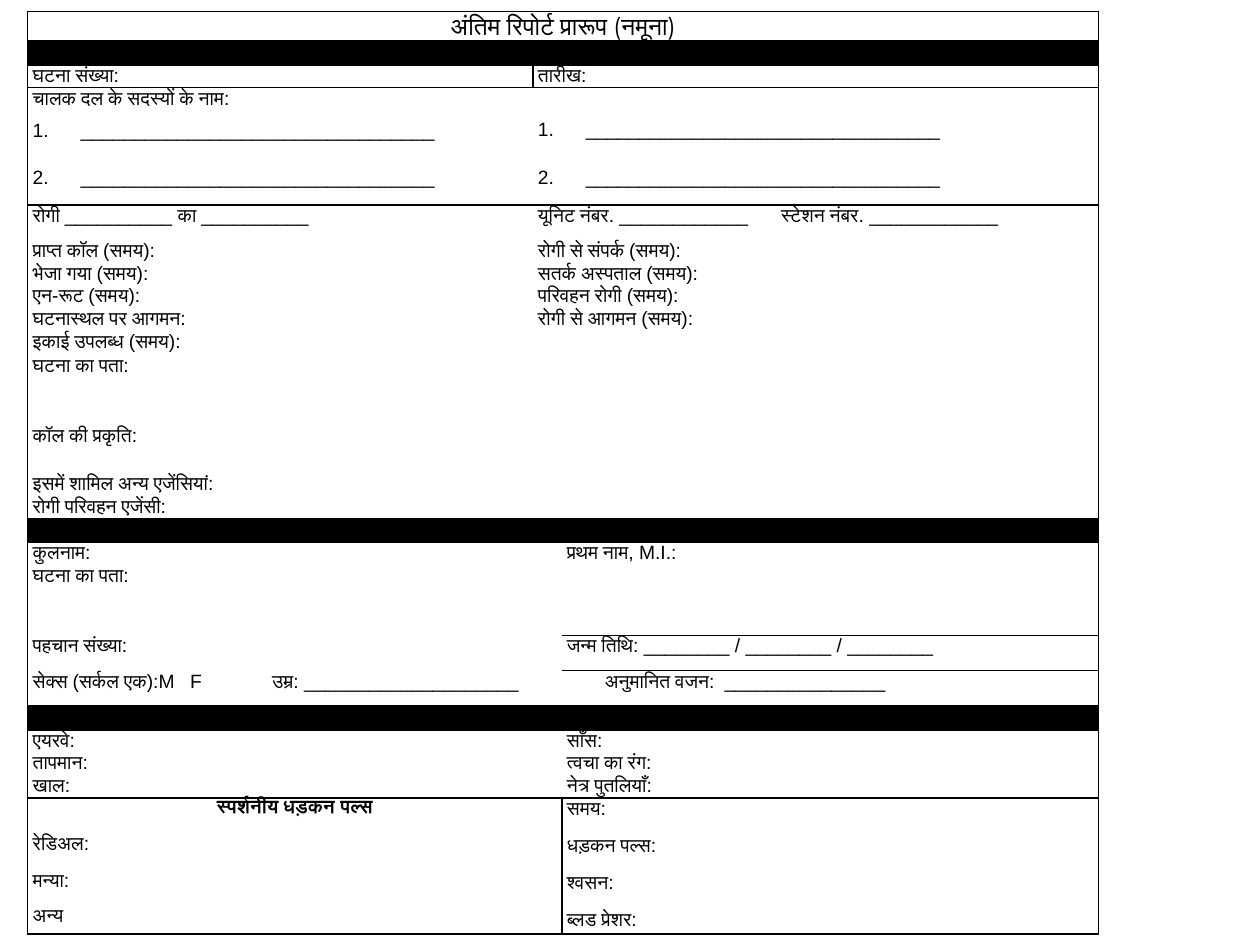
import pptx
import pptx.util
import pptx.dml.color
import pptx.enum.text
import pptx.oxml.ns
from lxml import etree
from pptx.util import Inches

BLACK = pptx.dml.color.RGBColor(0, 0, 0)
NO_STYLE = "{2D5ABB26-0587-4C30-8999-92F81FD0307C}"
CENTER = pptx.enum.text.PP_ALIGN.CENTER

FULL, LEFT_NARROW, LEFT_WIDE = [(0, 2)], [(0, 0), (1, 2)], [(0, 1), (2, 2)]
LINE = "_" * 33
TITLE, CREW, ADDRESS_ID, PULSE = 0, 3, 16, 22
BARS = (1, 13, 18)
RULED_BELOW = (0, 1, 2, 3, 12, 13, 17, 18, 21, 22)
DIVIDED = (2, 22)
PARA_GAPS = {CREW: [6, 15], 11: [15], PULSE: [9, 9, 9]}
TAB_STOPS = {4: [1.93], 17: [1.25, 1.9, 4.54, 5.49]}

ROWS = [
    (0.23, FULL, ["अंतिम रिपोर्ट प्रारूप (नमूना)"]),
    (0.18, FULL, [""]),
    (0.18, LEFT_NARROW, ["घटना संख्या:", "तारीख:"]),
    (0.93, LEFT_NARROW, [f"चालक दल के सदस्यों के नाम:\n{LINE}\n{LINE}", f"{LINE}\n{LINE}"]),
    (0.28, LEFT_NARROW, ["रोगी __________ का __________",
                         "यूनिट नंबर. ____________\tस्टेशन नंबर. ____________"]),
    (0.18, LEFT_NARROW, ["प्राप्त कॉल (समय):", "रोगी से संपर्क (समय):"]),
    (0.18, LEFT_NARROW, ["भेजा गया (समय):", "सतर्क अस्पताल (समय):"]),
    (0.18, LEFT_NARROW, ["एन-रूट (समय):", "परिवहन रोगी (समय):"]),
    (0.18, LEFT_NARROW, ["घटनास्थल पर आगमन:", "रोगी से आगमन (समय):"]),
    (0.18, LEFT_NARROW, ["इकाई उपलब्ध (समय):", ""]),
    (0.56, FULL, ["घटना का पता:"]),
    (0.56, FULL, ["कॉल की प्रकृति:\nइसमें शामिल अन्य एजेंसियां:"]),
    (0.18, FULL, ["रोगी परिवहन एजेंसी:"]),
    (0.18, FULL, [""]),
    (0.18, LEFT_WIDE, ["कुलनाम:", "प्रथम नाम, M.I.:"]),
    (0.56, FULL, ["घटना का पता:"]),
    (0.28, LEFT_WIDE, ["पहचान संख्या:", "जन्म तिथि: ________ / ________ / ________"]),
    (0.28, FULL, ["सेक्स (सर्कल एक):M\tF\tउम्र: ____________________"
                  "\tअनुमानित वजन:\t_______________"]),
    (0.18, FULL, [""]),
    (0.18, LEFT_WIDE, ["एयरवे:", "साँस:"]),
    (0.18, LEFT_WIDE, ["तापमान:", "त्वचा का रंग:"]),
    (0.18, LEFT_WIDE, ["खाल:", "नेत्र पुतलियाँ:"]),
    (1.08, LEFT_WIDE, ["स्पर्शनीय धड़कन पल्स\nरेडिअल:\nमन्या:\nअन्य",
                       "समय:\nधड़कन पल्स:\nश्वसन:\nब्लड प्रेशर:"]),
]


def add_element(parent, tag, **attributes):
    return etree.SubElement(parent, pptx.oxml.ns.qn(tag), **attributes)


def set_borders(cell, sides):
    properties = cell._tc.get_or_add_tcPr()
    for side in "LRTB":
        if side in sides:
            line = add_element(properties, f"a:ln{side}", w="12700")
            fill = add_element(line, "a:solidFill")
            add_element(fill, "a:srgbClr", val=str(BLACK))


deck = pptx.Presentation()
deck.slide_width, deck.slide_height = Inches(10), Inches(7.5)
page = deck.slides.add_slide(deck.slide_layouts[6])

table = page.shapes.add_table(
    len(ROWS), 3, Inches(0.22), Inches(0.09), Inches(8.5), Inches(7.28)).table
table.first_row = False
table.horz_banding = False
table._tbl.tblPr.find(pptx.oxml.ns.qn("a:tableStyleId")).text = NO_STYLE
for column, width in zip(table.columns, (4.01, 0.23, 4.26)):
    column.width = Inches(width)

for row, (height, spans, texts) in enumerate(ROWS):
    table.rows[row].height = Inches(height)
    for cell in table.rows[row].cells:
        cell.margin_left = cell.margin_right = Inches(0.04)
        cell.margin_top = cell.margin_bottom = 0

    for (first, last), text in zip(spans, texts):
        cell = table.cell(row, first)
        if last > first:
            cell.merge(table.cell(row, last))
        sides = ""
        if first == 0 or row in DIVIDED:
            sides += "L"
        if last == 2 or row in DIVIDED:
            sides += "R"
        if row == TITLE or (row == ADDRESS_ID and first == 2):
            sides += "T"
        if row in RULED_BELOW:
            sides += "B"
        set_borders(cell, sides)
        if row in BARS:
            cell.fill.solid()
            cell.fill.fore_color.rgb = BLACK
        else:
            cell.fill.background()
        if not text:
            continue

        gaps = [0] + PARA_GAPS.get(row, [])
        if row == CREW and first == 1:
            cell.margin_top = Inches(0.25)
            gaps = [0, 15]
        for index, wording in enumerate(text.split("\n")):
            frame = cell.text_frame
            para = frame.paragraphs[0] if index == 0 else frame.add_paragraph()
            para.text = wording
            if gaps[index]:
                para.space_before = pptx.util.Pt(gaps[index])
            heading = row == PULSE and first == 0 and index == 0
            if row == TITLE or heading:
                para.alignment = CENTER
            properties = para._p.get_or_add_pPr()
            if wording == LINE:
                properties.set("marL", str(Inches(0.38)))
                properties.set("indent", str(Inches(-0.38)))
                add_element(properties, "a:buFont", typeface="+mj-lt")
                add_element(properties, "a:buAutoNum", type="arabicPeriod")
            if "\t" in wording:
                stops = add_element(properties, "a:tabLst")
                for stop in TAB_STOPS[row]:
                    add_element(stops, "a:tab", pos=str(Inches(stop)), algn="l")
            para.font.name = {TITLE: "Montserrat"}.get(row, "Arial")
            if wording == "अन्य":
                para.font.name = "Calibri"
            para.font.size = pptx.util.Pt(14 if row == TITLE else 11)
            para.font.bold = heading
            para.font.color.rgb = BLACK

    for cell in table.rows[row].cells:
        if not cell.text_frame.text:
            add_element(cell.text_frame.paragraphs[0]._p, "a:endParaRPr", sz="1100")

deck.save("out.pptx")
